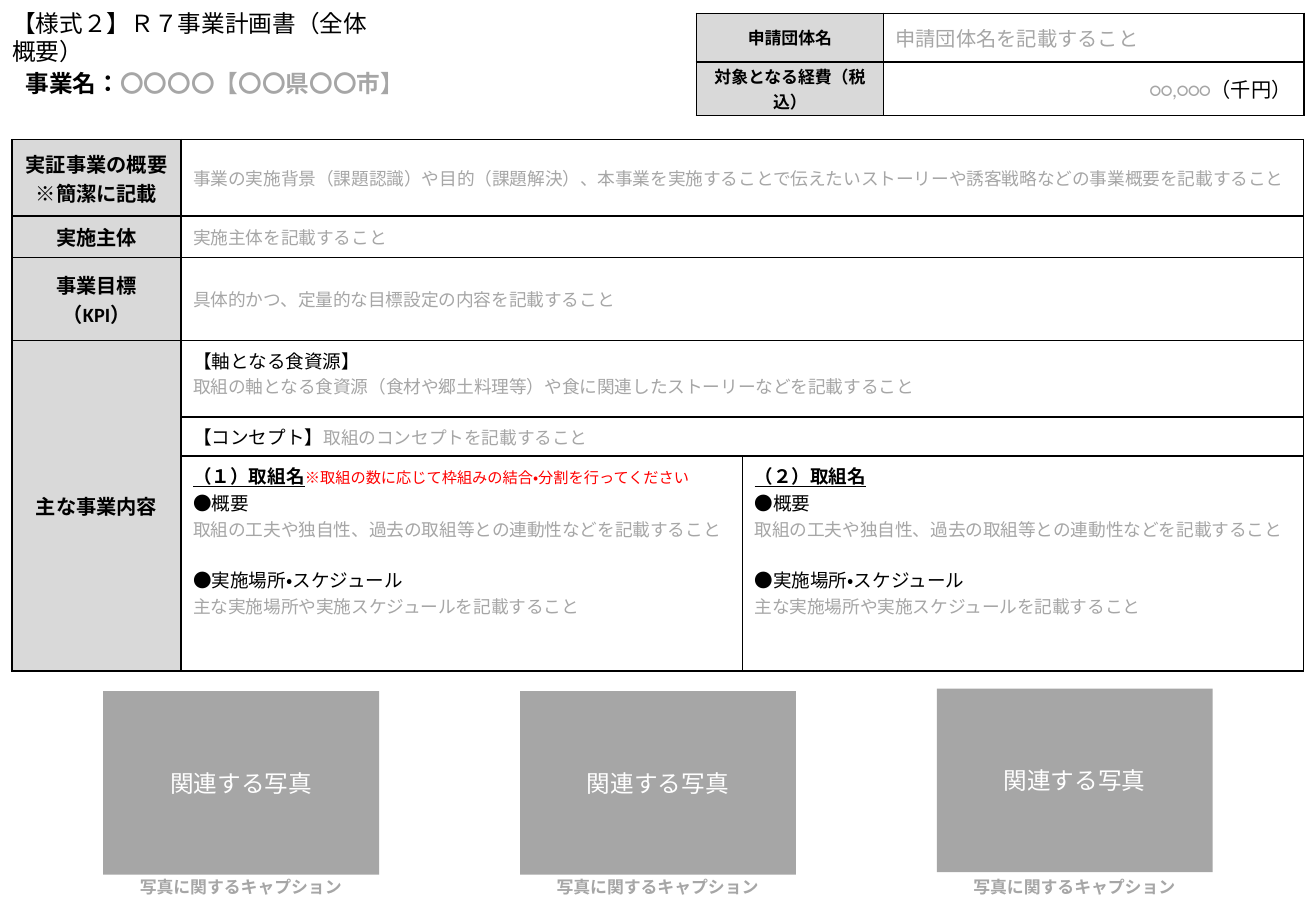
"""Build the one-page project plan form with its tables and photo frames."""
from lxml.etree import SubElement
from pptx import Presentation
from pptx.dml.color import RGBColor
from pptx.enum.lang import MSO_LANGUAGE_ID as Lang
from pptx.enum.shapes import MSO_SHAPE as Shape
from pptx.enum.text import MSO_ANCHOR as Anchor, MSO_AUTO_SIZE as Auto, PP_ALIGN as Align
from pptx.oxml.ns import qn
from pptx.util import Inches, Pt

HUE = {"ink": "000000", "hint": "A6A6A6", "head": "D9D9D9", "note": "FF0000", "white": "FFFFFF"}

STYLES = {
    "title": ("ink", {"size": Pt(14), "bold": False}),
    "name": ("ink", {"size": Pt(14), "bold": True}),
    "blank": ("hint", {"size": Pt(14), "bold": True}),
    "photo": ("white", {"size": Pt(14), "bold": False}),
    "caption": ("hint", {"size": Pt(10), "bold": True}),
    "head": ("ink", {"size": Pt(12), "bold": True}),
    "small": ("ink", {"size": Pt(10), "bold": True}),
    "unit": ("ink", {"size": Pt(12), "bold": False}),
    "entry": ("hint", {"size": Pt(12), "bold": False}),
    "hint": ("hint", {"size": Pt(10.5), "bold": False}),
    "label": ("ink", {"size": Pt(11), "bold": False}),
    "gap": ("ink", {"size": Pt(11), "bold": False}),
    "item": ("ink", {"size": Pt(11), "bold": True, "underline": True}),
    "note": ("note", {"size": Pt(9), "bold": False}),
}

TITLE = [[("【様式２】Ｒ７事業計画書（全体概要）", "title")]]
NAME = [[("事業名：", "name"), ("〇〇〇〇【〇〇県〇〇市】", "blank")]]
PHOTO = [[("関連する写真", "photo")]]
CAPTION = [[("写真に関するキャプション", "caption")]]
PHOTO_TOPS = (5.69, 5.69, 5.67)
STEP = 3.43

APPLICANT = [
    ([[("申請団体名", "small")]], [[("申請団体名を記載すること", "entry")]], Align.LEFT),
    ([[("対象となる経費（税込）", "small")]],
     [[("○○,○○○", "entry"), ("（千円）", "unit")]], Align.RIGHT),
]
HEADS = [
    [[("実証事業の概要", "head")], [("※簡潔に記載", "head")]],
    [[("実施主体", "head")]],
    [[("事業目標（KPI）", "head")]],
    [[("主な事業内容", "head")]],
]
WIDE = [
    [[("事業の実施背景（課題認識）や目的（課題解決）、本事業を実施することで伝えたい"
       "ストーリーや誘客戦略などの事業概要を記載すること", "hint")]],
    [[("実施主体を記載すること", "hint")]],
    [[("具体的かつ、定量的な目標設定の内容を記載すること", "hint")]],
    [[("【軸となる食資源】", "label")],
     [("取組の軸となる食資源（食材や郷土料理等）や食に関連したストーリーなどを記載すること", "hint")]],
    [[("【コンセプト】", "label"), ("取組のコンセプトを記載すること", "hint")]],
]
DETAIL = [
    [("●概要", "label")],
    [("取組の工夫や独自性、過去の取組等との連動性などを記載すること", "hint")],
    [("●実施場所・スケジュール", "gap")],
    [("主な実施場所や実施スケジュールを記載すること", "hint")],
]
EFFORTS = [
    [("（１）取組名", "item"), ("※取組の数に応じて枠組みの結合・分割を行ってください", "note")],
    [("（２）取組名", "item")],
]


def rgb(name):
    return RGBColor.from_string(HUE[name])


def write(frame, paras, align=Align.LEFT):
    frame.word_wrap = True
    for i, runs in enumerate(paras):
        para = frame.add_paragraph() if i else frame.paragraphs[0]
        para.alignment = align
        if runs[0][1] == "gap":
            para.space_before = Pt(14.5)
        for text, style in runs:
            run = para.add_run()
            run.text = text
            hue, look = STYLES[style]
            for key, val in {"name": "Calibri", "language_id": Lang.JAPANESE, **look}.items():
                setattr(run.font, key, val)
            run.font.color.rgb = rgb(hue)


def border(cell, hue):
    props = cell._tc.get_or_add_tcPr()
    for side in ("a:lnL", "a:lnR", "a:lnT", "a:lnB"):
        line = SubElement(props, qn(side), w=str(Pt(1)))
        if hue:
            fill = SubElement(line, qn("a:solidFill"))
            SubElement(fill, qn("a:srgbClr"), val=HUE[hue])
        else:
            SubElement(line, qn("a:noFill"))


def grid(left, top, cols, rows, hue="ink"):
    box = map(Inches, (left, top, sum(cols), sum(rows)))
    table = slide.shapes.add_table(len(rows), len(cols), *box).table
    table.first_row = table.horz_banding = False
    for parts, key, sizes in ((table.columns, "width", cols), (table.rows, "height", rows)):
        for part, size in zip(parts, sizes):
            setattr(part, key, Inches(size))
    for cell in table.iter_cells():
        border(cell, hue)
        cell.fill.background()
    return table


def put(cell, paras, align=Align.LEFT, anchor=Anchor.MIDDLE, head=False):
    write(cell.text_frame, paras, align)
    cell.vertical_anchor = anchor
    if head:
        cell.fill.solid()
        cell.fill.fore_color.rgb = rgb("head")


deck = Presentation()
deck.slide_width, deck.slide_height = Inches(10.83), Inches(7.5)
slide = deck.slides.add_slide(deck.slide_layouts[5])

title = slide.shapes.title
for key, val in {"left": 0, "top": 0.02, "width": 3.17, "height": 0.34}.items():
    setattr(title, key, Inches(val))
write(title.text_frame, TITLE)
title.text_frame.vertical_anchor = Anchor.TOP
title.text_frame.auto_size = Auto.NONE

plan = grid(0.1, 1.15, (1.39, 4.62, 4.62), (0.63, 0.28, 0.68, 0.63, 0.3, 1.77))
plan.cell(3, 0).merge(plan.cell(5, 0))
for row, paras in enumerate(HEADS):
    put(plan.cell(row, 0), paras, Align.CENTER, head=True)
for row, paras in enumerate(WIDE):
    plan.cell(row, 1).merge(plan.cell(row, 2))
    put(plan.cell(row, 1), paras, anchor=Anchor.MIDDLE if row < 3 else Anchor.TOP)
for col, lead in enumerate(EFFORTS, 1):
    put(plan.cell(5, col), [lead] + DETAIL, anchor=Anchor.TOP)

put(grid(0.11, 0.31, (5.51,), (0.74,), None).cell(0, 0), NAME)

form = grid(5.73, 0.11, (1.54, 3.46), (0.4, 0.4))
for row, (label, entry, align) in enumerate(APPLICANT):
    put(form.cell(row, 0), label, Align.CENTER, head=True)
    put(form.cell(row, 1), entry, align)
for cell in form.iter_cells():
    cell.margin_top = cell.margin_bottom = Inches(0.02)

for i, top in enumerate(PHOTO_TOPS):
    box = map(Inches, (0.85 + i * STEP, top, 2.27, 1.51))
    photo = slide.shapes.add_shape(Shape.RECTANGLE, *box)
    photo.shadow.inherit = False
    photo.fill.solid()
    photo.fill.fore_color.rgb = rgb("hint")
    photo.line.fill.background()
    photo.text_frame.vertical_anchor = Anchor.MIDDLE
    write(photo.text_frame, PHOTO, Align.CENTER)
    box = map(Inches, (0.67 + i * STEP, 7.17, 2.62, 0.27))
    write(slide.shapes.add_textbox(*box).text_frame, CAPTION, Align.CENTER)

deck.save("out.pptx")
